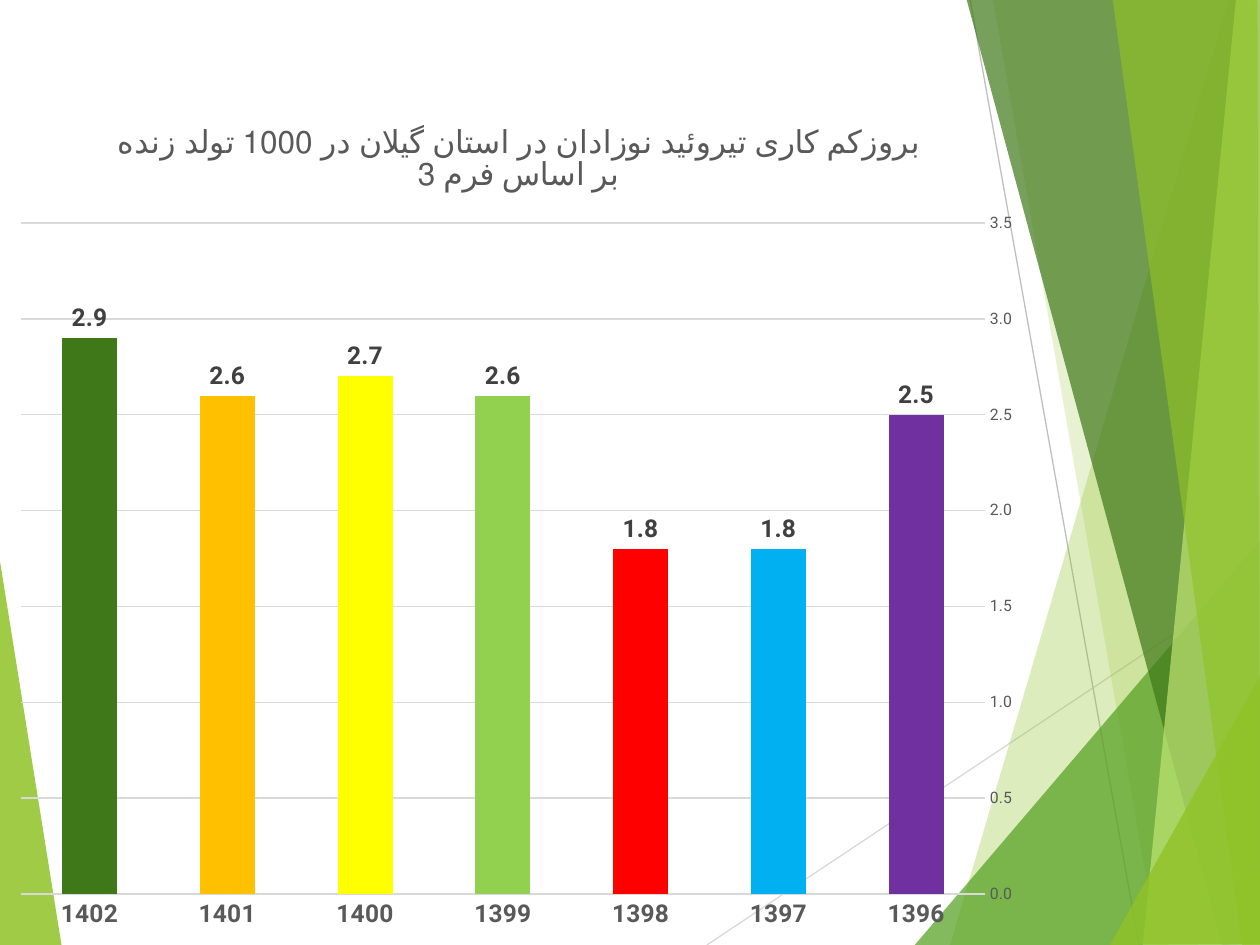
"""Build the slide with a column chart of yearly rates over green facets."""
from lxml import etree
from pptx import Presentation
from pptx import util as u
from pptx.chart import data as cd
from pptx.dml import color as dc
from pptx.enum import chart as ec
from pptx.enum import shapes as es
from pptx.oxml import ns, parse_xml

HUES = {
    "lime": "90C226", "green": "54A021", "dark": "3F7819", "pale": "C0E474",
    "grid": "D9D9D9", "rule": "BFBFBF", "text": "595959", "label": "404040",
    "base": "FFFFFF", "violet": "7030A0", "blue": "00B0F0", "red": "FF0000",
    "grass": "92D050", "yellow": "FFFF00", "gold": "FFC000", "black": "000000",
}
FACE = "Roboto"
inch = u.Inches


def hue(name):
    return dc.RGBColor.from_string(HUES[name])


def style(font, size, name, bold=False):
    font.size, font.bold, font.name = u.Pt(size), bold, FACE
    font.color.rgb = hue(name)


deck = Presentation()
deck.slide_width, deck.slide_height = inch(10), inch(7.5)
slide = deck.slides.add_slide(deck.slide_layouts[6])

for start, end, name in [
    ((5.61, 7.5), (10.01, 4.57), "grid"),
    ((7.7, 0), (9.04, 7.5), "rule"),
]:
    line = slide.shapes.add_connector(
        es.MSO_CONNECTOR.STRAIGHT, *map(inch, start + end))
    line.line.color.rgb = hue(name)
    line.line.width = u.Pt(0.75)
    etree.SubElement(line._element.spPr, ns.qn("a:effectLst"))

facets = [
    ("lime", 85, [(-0.01, 4.39), (0.49, 7.51), (-0.01, 7.5)]),
    ("lime", 30, [(9.75, 0), (7.54, 7.5), (10.02, 7.51), (10.01, 0.01)]),
    ("lime", 20, [(7.88, -0.01), (9.19, 7.5), (10.01, 7.5), (10.01, -0.01)]),
    ("green", 72, [(7.26, 7.5), (10, 4.29), (10.01, 7.5)]),
    ("dark", 70, [(7.67, -0.01), (9.7, 7.5), (10.01, 7.49), (10.01, -0.01)]),
    ("pale", 70, [(9.81, -0.01), (9.07, 7.5), (10.01, 7.5), (10, -0.01)]),
    ("lime", 65, [(8.83, -0.01), (9.86, 7.5), (10, 7.5), (9.98, -0.01)]),
    ("lime", 80, [(8.81, 7.5), (10.01, 5.35), (10.01, 7.49)]),
]
for name, alpha, dots in facets:
    first, *rest = [(inch(x), inch(y)) for x, y in dots]
    pen = slide.shapes.build_freeform(*first)
    pen.add_line_segments(rest)
    facet = pen.convert_to_shape()
    facet.shadow.inherit = False
    facet.fill.solid()
    facet.fill.fore_color.rgb = hue(name)
    facet.line.fill.background()
    tint = facet._element.spPr.find(".//" + ns.qn("a:srgbClr"))
    etree.SubElement(tint, ns.qn("a:alpha")).set("val", str(alpha * 1000))

years = [
    ("1396", 2.5, "violet"), ("1397", 1.8, "blue"), ("1398", 1.8, "red"),
    ("1399", 2.6, "grass"), ("1400", 2.7, "yellow"), ("1401", 2.6, "gold"),
    ("1402", 2.9, "dark"),
]
data = cd.CategoryChartData(number_format="0.0")
data.categories = [year for year, rate, name in years]
data.add_series("Series 1", [rate for year, rate, name in years])
chart = slide.shapes.add_chart(
    ec.XL_CHART_TYPE.COLUMN_CLUSTERED,
    inch(0), inch(0.76), inch(8.23), inch(6.74), data).chart
style(chart.font, 10, "black")
chart.has_legend = False

chart.has_title = True
chart.chart_title.include_in_layout = False
para = chart.chart_title.text_frame.paragraphs[0]
para._p.get_or_add_pPr().set("rtl", "1")
run = para.add_run()
run.text = "بروزکم کاری تیروئید نوزادان در استان گیلان در 1000 تولد زنده بر اساس فرم 3"
style(run.font, 18, "text")

cats = chart.category_axis
cats.reverse_order = True
style(cats.tick_labels.font, 14, "text", True)
vals = chart.value_axis
vals.minimum_scale, vals.maximum_scale, vals.major_unit = 0, 3.5, 0.5
style(vals.tick_labels.font, 9, "text")
vals.tick_labels.number_format = "0.0"
vals.tick_labels.number_format_is_linked = False
vals.has_major_gridlines = True
grid = vals.major_gridlines.format.line
grid.color.rgb = hue("grid")
grid.width = u.Pt(0.75)
for axis in (cats, vals):
    axis.major_tick_mark = axis.minor_tick_mark = ec.XL_TICK_MARK.NONE
    axis.format.line.fill.background()

plot = chart.plots[0]
plot.gap_width = 150
plot.vary_by_categories = False
bars = plot.series[0]
bars.format.fill.solid()
bars.format.fill.fore_color.rgb = hue("base")
for spot, (year, rate, name) in enumerate(years):
    fill = bars.points[spot].format.fill
    fill.solid()
    fill.fore_color.rgb = hue(name)

tags = bars.data_labels
tags.show_value = True
tags.number_format = "0.0"
tags.number_format_is_linked = False
tags.position = ec.XL_LABEL_POSITION.OUTSIDE_END
style(tags.font, 14, "label", True)

area = chart._chartSpace.find(".//" + ns.qn("c:plotArea"))
for old in area.findall(ns.qn("c:layout")):
    area.remove(old)
sides = {"x": 0.02, "y": 0.15, "w": 0.93, "h": 0.79}
marks = '<c:layoutTarget val="inner"/><c:xMode val="edge"/><c:yMode val="edge"/>'
marks += "".join(f'<c:{key} val="{size}"/>' for key, size in sides.items())
area.insert(0, parse_xml(
    f'<c:layout {ns.nsdecls("c")}><c:manualLayout>{marks}</c:manualLayout></c:layout>'))

deck.save("out.pptx")
